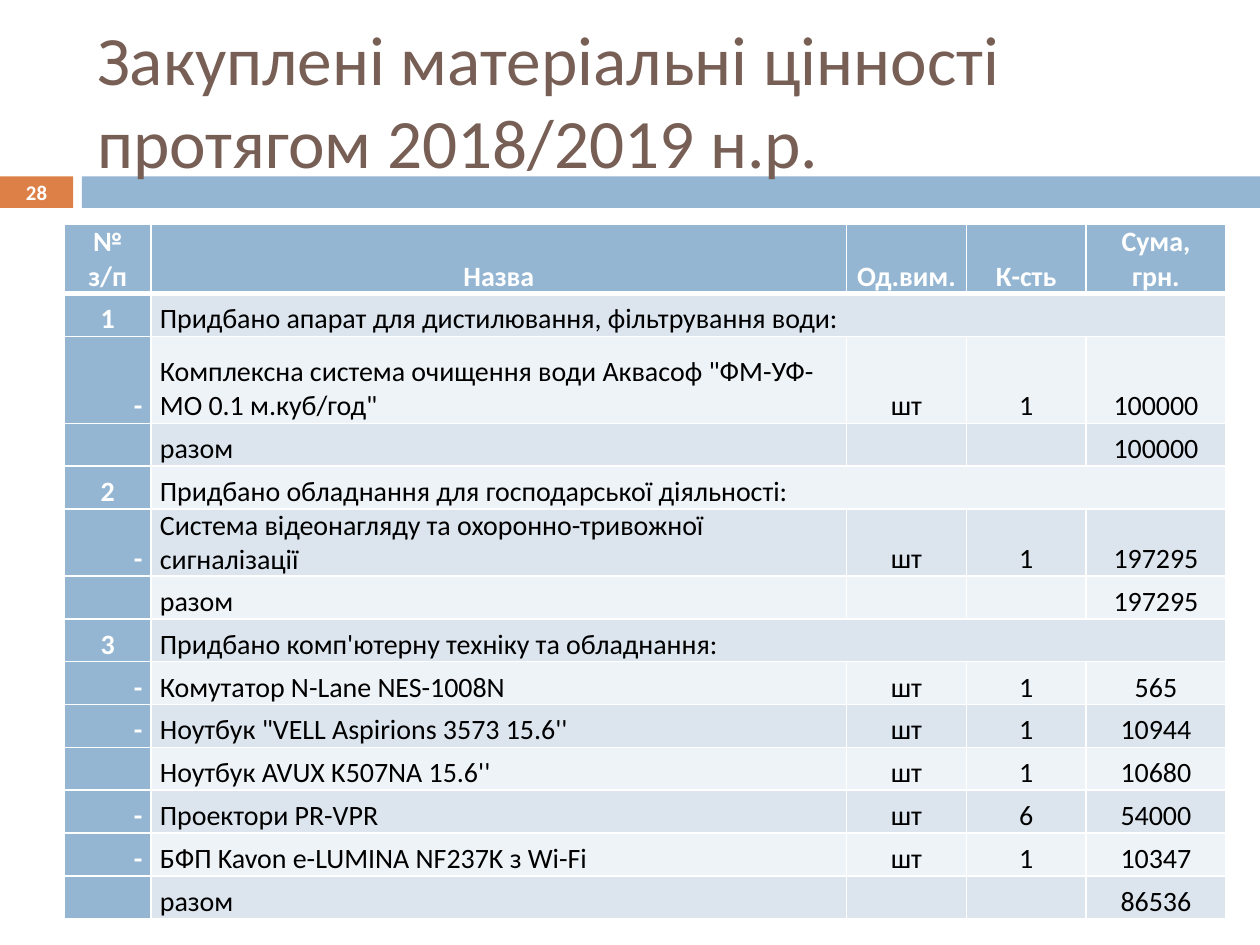
"""Build the slide listing the equipment bought during the 2018/2019 school year."""
from lxml.etree import SubElement
from pptx import Presentation
from pptx.dml.color import RGBColor
from pptx.enum.shapes import MSO_SHAPE as Preset
from pptx.enum.text import MSO_ANCHOR as Anchor, MSO_AUTO_SIZE as AutoSize, PP_ALIGN as Align
from pptx.oxml.ns import qn
from pptx.util import Inches, Pt

COLORS = {
    "accent": "DD8047",
    "main": "94B6D2",
    "title": "775F55",
    "odd": "DCE5EE",
    "even": "EEF3F7",
    "white": "FFFFFF",
    "black": "000000",
}
COLUMN_WIDTHS = [0.69, 5.52, 0.95, 0.95, 1.11]
ROW_HEIGHT = 0.34
TALL_ROWS = {0: 0.55, 2: 0.69}
UNIT = "шт"
TOTAL = "разом"
ROWS = [
    ["№ з/п", "Назва", "Од.вим.", "К-сть", "Сума, грн."],
    ["1", "Придбано апарат для дистилювання, фільтрування води:"],
    ["-", "Комплексна система очищення води Аквасоф \"ФМ-УФ-МО 0.1 м.куб/год\"", UNIT, "1", "100000"],
    ["", TOTAL, "", "", "100000"],
    ["2", "Придбано обладнання для господарської діяльності:"],
    ["-", "Система відеонагляду та охоронно-тривожної сигналізації", UNIT, "1", "197295"],
    ["", TOTAL, "", "", "197295"],
    ["3", "Придбано комп'ютерну техніку та обладнання:"],
    ["-", "Комутатор N-Lane NES-1008N", UNIT, "1", "565"],
    ["-", "Ноутбук \"VELL Aspirions 3573 15.6''", UNIT, "1", "10944"],
    ["", "Ноутбук AVUX K507NA 15.6''", UNIT, "1", "10680"],
    ["-", "Проектори PR-VPR", UNIT, "6", "54000"],
    ["-", "БФП Kavon e-LUMINA NF237K з Wi-Fi", UNIT, "1", "10347"],
    ["", TOTAL, "", "", "86536"],
]


class SlideBuilder:
    """Hold the style and the current slide."""

    font_name = "Calibri"

    def __init__(self, presentation):
        self.slide = presentation.slides.add_slide(presentation.slide_layouts[5])

    def color(self, name):
        return RGBColor.from_string(COLORS[name])

    def set_text(self, text_frame, text, size, color, bold=False, align=Align.LEFT):
        text_frame.text = text
        for paragraph in text_frame.paragraphs:
            paragraph.alignment = align
            for run in paragraph.runs:
                run.font.name = self.font_name
                run.font.size = Pt(size)
                run.font.bold = bold
                run.font.color.rgb = self.color(color)

    def title(self, text, left, top, width, height):
        shape = self.slide.shapes.title
        shape.left, shape.top = Inches(left), Inches(top)
        shape.width, shape.height = Inches(width), Inches(height)
        shape.text_frame.auto_size = AutoSize.NONE
        shape.text_frame.vertical_anchor = Anchor.MIDDLE
        self.set_text(shape.text_frame, text, 39.6, "title")

    def bar(self, color, left, top, width, height):
        shape = self.slide.shapes.add_shape(
            Preset.RECTANGLE, Inches(left), Inches(top), Inches(width), Inches(height))
        shape.shadow.inherit = False
        shape.fill.solid()
        shape.fill.fore_color.rgb = self.color(color)
        shape.line.fill.background()
        self.slide.shapes.title.element.addprevious(shape.element)

    def number(self, text, left, top, width, height):
        box = self.slide.shapes.add_textbox(
            Inches(left), Inches(top), Inches(width), Inches(height))
        frame = box.text_frame
        frame.word_wrap = True
        frame.vertical_anchor = Anchor.MIDDLE
        frame.margin_left = frame.margin_right = frame.margin_top = frame.margin_bottom = 0
        self.set_text(frame, text, 11.9, "white", True, Align.CENTER)

    def borders(self, cell, is_header):
        properties = cell._tc.get_or_add_tcPr()
        for index, side in enumerate(("lnL", "lnR", "lnT", "lnB")):
            width = 3 if is_header and side == "lnB" else 1
            line = properties.makeelement(qn(f"a:{side}"), {"w": str(Pt(width))})
            fill = SubElement(line, qn("a:solidFill"))
            SubElement(fill, qn("a:srgbClr"), val=COLORS["white"])
            properties.insert(index, line)

    def cell(self, cell, text, row, column):
        is_header = row == 0
        is_label = is_header or column == 0
        band = "odd" if row % 2 else "even"
        cell.fill.solid()
        cell.fill.fore_color.rgb = self.color("main" if is_label else band)
        cell.vertical_anchor = Anchor.BOTTOM
        cell.margin_left = cell.margin_right = Inches(0.07)
        cell.margin_top = cell.margin_bottom = 0
        if text == "-":
            align = Align.RIGHT
        elif column == 1 and not is_header:
            align = Align.LEFT
        else:
            align = Align.CENTER
        self.set_text(cell.text_frame, text, 16, "white" if is_label else "black", is_label, align)
        self.borders(cell, is_header)

    def table(self, rows, left, top):
        heights = [TALL_ROWS.get(index, ROW_HEIGHT) for index in range(len(rows))]
        table = self.slide.shapes.add_table(
            len(rows), len(COLUMN_WIDTHS), Inches(left), Inches(top),
            Inches(sum(COLUMN_WIDTHS)), Inches(sum(heights))).table
        for column, width in zip(table.columns, COLUMN_WIDTHS):
            column.width = Inches(width)
        for row, (texts, height) in enumerate(zip(rows, heights)):
            table.rows[row].height = Inches(height)
            if len(texts) < len(COLUMN_WIDTHS):
                table.cell(row, len(texts) - 1).merge(table.cell(row, len(COLUMN_WIDTHS) - 1))
            for column, text in enumerate(texts):
                self.cell(table.cell(row, column), text, row, column)


def main():
    presentation = Presentation()
    presentation.slide_width, presentation.slide_height = Inches(10), Inches(7.5)
    builder = SlideBuilder(presentation)
    builder.bar("accent", 0, 1.4, 0.58, 0.25)
    builder.bar("main", 0.65, 1.4, 9.35, 0.25)
    builder.title("Закуплені матеріальні цінності протягом 2018/2019 н.р.", 0.67, 0.25, 8.92, 1.08)
    builder.number("28", 0, 1.39, 0.58, 0.27)
    builder.table(ROWS, 0.51, 1.78)
    presentation.save("out.pptx")


if __name__ == "__main__":
    main()
